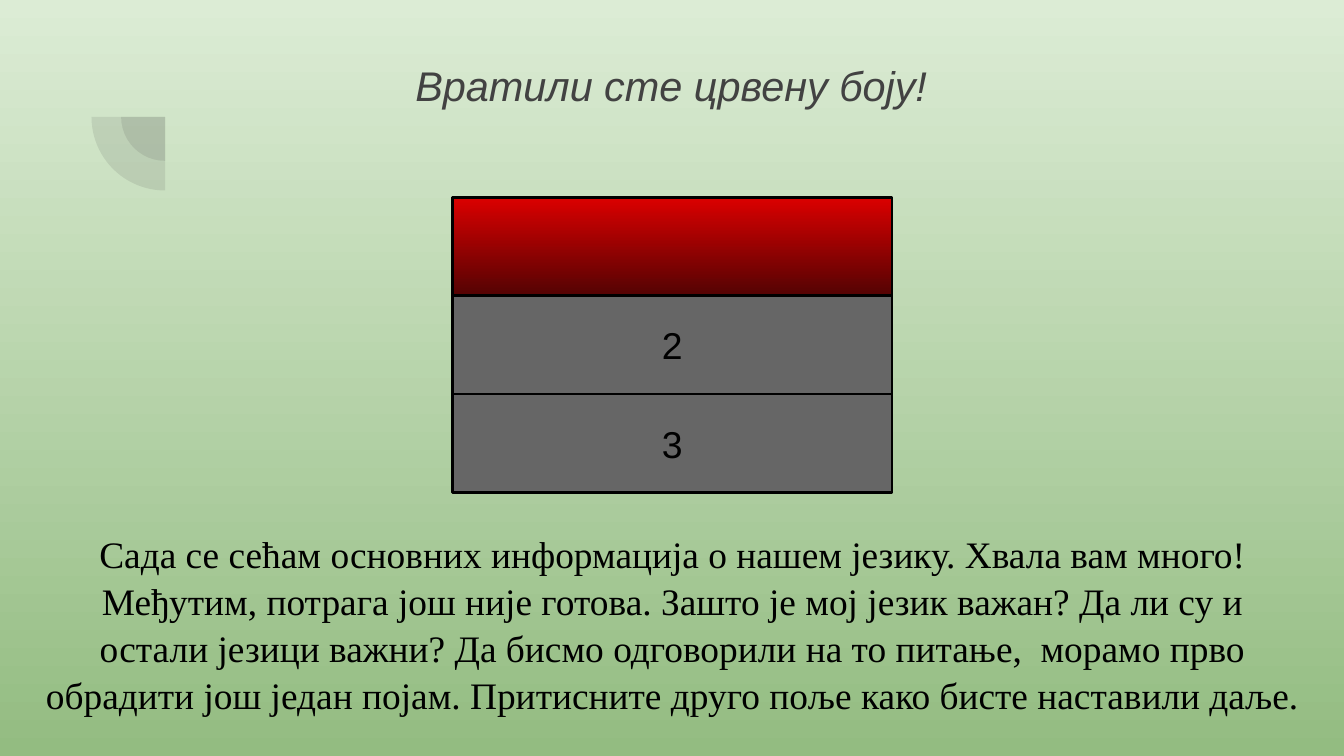
from lxml.etree import SubElement
from pptx import Presentation
from pptx.dml.color import RGBColor
from pptx.enum.shapes import MSO_SHAPE as Shape
from pptx.enum.text import MSO_ANCHOR as Anchor, MSO_AUTO_SIZE as AutoSize, PP_ALIGN as Align
from pptx.oxml.ns import qn
from pptx.util import Cm, Pt

COLORS = {
    "sky": "DCECD5", "grass": "93BC81", "ink": "424242", "black": "000000",
    "grey": "666666", "red": "DB0000", "dark_red": "540303",
}


class SlideBuilder:
    """Holds the style and the current slide."""

    inset = Cm(0.25)

    def __init__(self, slide):
        self.slide = slide

    def color(self, name):
        return RGBColor.from_string(COLORS[name])

    def gradient(self, fill, top, bottom):
        fill.gradient()
        fill.gradient_angle = 270
        for stop, name, position in zip(fill.gradient_stops, (top, bottom), (0, 1)):
            stop.color.rgb = self.color(name)
            stop.position = position

    def place(self, shape, left, top, width, height):
        shape.left, shape.top = Cm(left), Cm(top)
        shape.width, shape.height = Cm(width), Cm(height)

    def set_text(self, shape, text, font_name, size, color, anchor):
        frame = shape.text_frame
        frame.word_wrap = True
        frame.auto_size = AutoSize.NONE
        frame.vertical_anchor = anchor
        frame.margin_left = frame.margin_right = self.inset
        frame.margin_top = frame.margin_bottom = self.inset
        frame.text = text
        paragraph = frame.paragraphs[0]
        paragraph.alignment = Align.CENTER
        paragraph.space_before = Pt(0)
        paragraph.font.name = font_name
        paragraph.font.size = Pt(size)
        paragraph.font.color.rgb = self.color(color)
        return paragraph

    def title(self, text, *box):
        shape = self.slide.shapes.title
        self.place(shape, *box)
        paragraph = self.set_text(shape, text, "Arial", 22.2, "ink", Anchor.TOP)
        paragraph.font.italic = True

    def body(self, text, *box):
        shape = self.slide.placeholders[1]
        self.place(shape, *box)
        paragraph = self.set_text(shape, text, "Times New Roman", 20, "black", Anchor.TOP)
        paragraph.line_spacing = 1.05
        paragraph.space_after = Pt(12)
        # No bullet, no hanging indent
        properties = paragraph._p.get_or_add_pPr()
        properties.set("marL", "0")
        properties.set("indent", "0")
        bullet = SubElement(properties, qn("a:buNone"))
        properties.find(qn("a:spcAft")).addnext(bullet)

    def shape(self, kind, left, top, width, height):
        shape = self.slide.shapes.add_shape(kind, Cm(left), Cm(top), Cm(width), Cm(height))
        shape.shadow.inherit = False
        return shape

    def quarter(self, center_x, center_y, radius):
        pie = self.shape(Shape.PIE, center_x - radius, center_y - radius, 2 * radius, 2 * radius)
        pie.rotation = 270
        pie.adjustments[0], pie.adjustments[1] = 108, 162
        pie.line.fill.background()
        pie.fill.solid()
        pie.fill.fore_color.rgb = self.color("ink")
        rgb = pie.fill._xPr.find(qn("a:solidFill"))[0]
        SubElement(rgb, qn("a:alpha"), val="12000")

    def field(self, label, *box):
        field = self.shape(Shape.RECTANGLE, *box)
        field.line.color.rgb = self.color("black")
        field.line.width = Pt(1.5)
        if label:
            field.fill.solid()
            field.fill.fore_color.rgb = self.color("grey")
            self.set_text(field, label, "Arial", 20, "black", Anchor.MIDDLE)
        else:
            self.gradient(field.fill, "red", "dark_red")


def main():
    presentation = Presentation()
    presentation.slide_width, presentation.slide_height = Cm(25.4), Cm(14.29)
    slide = presentation.slides.add_slide(presentation.slide_layouts[1])
    builder = SlideBuilder(slide)
    builder.gradient(slide.background.fill, "sky", "grass")

    # Corner ornament
    for radius in (0.83, 1.39):
        builder.quarter(3.12, 2.21, radius)

    # Title and message
    builder.title("Вратили сте црвену боју!", 1.07, 0.89, 23.24, 2.41)
    builder.body(
        "Сада се сећам основних информација о нашем језику. Хвала вам много! "
        "Међутим, потрага још није готова. Зашто је мој језик важан? "
        "Да ли су и остали језици важни? Да бисмо одговорили на то питање,  "
        "морамо прво обрадити још један појам. "
        "Притисните друго поље како бисте наставили даље.",
        0.61, 9.75, 24.21, 4.34,
    )

    # Flag: the red field is restored, the others still numbered
    field_height = 1.86
    for row, label in enumerate(("", "2", "3")):
        builder.field(label, 8.55, 3.73 + row * field_height, 8.31, field_height)

    presentation.save("out.pptx")


if __name__ == "__main__":
    main()
